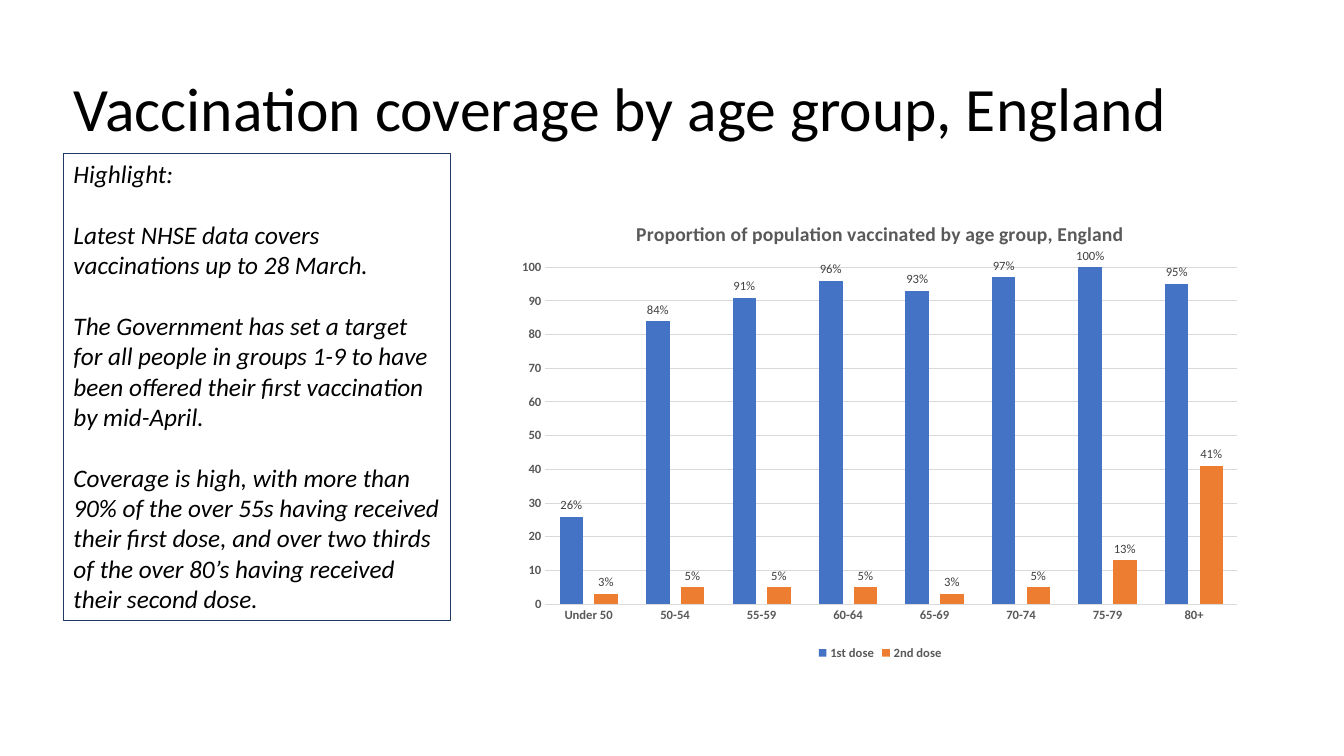
from dataclasses import dataclass
from typing import Any

from lxml.etree import SubElement
from pptx import Presentation
from pptx.chart.data import CategoryChartData
from pptx.dml.color import RGBColor
from pptx.enum.chart import XL_CHART_TYPE as ChartType
from pptx.enum.chart import XL_LABEL_POSITION as LabelPos
from pptx.enum.chart import XL_LEGEND_POSITION as LegendPos
from pptx.enum.chart import XL_TICK_MARK as Tick
from pptx.enum.shapes import MSO_SHAPE as Shape
from pptx.enum.text import MSO_ANCHOR as Anchor
from pptx.enum.text import MSO_AUTO_SIZE as AutoSize
from pptx.enum.text import PP_ALIGN as Align
from pptx.oxml.ns import qn
from pptx.util import Inches, Pt

WIDTH, HEIGHT = Inches(13.33), Inches(7.5)
FONT = "Calibri"
BLACK, GREY, LABEL_GREY, GRID_GREY, NAVY = "000000", "595959", "404040", "D9D9D9", "203864"


@dataclass(frozen=True)
class Area:
    left: float
    top: float
    width: float
    height: float

    def box(self) -> dict[str, int]:
        return {
            "left": int(WIDTH * self.left / 100),
            "top": int(HEIGHT * self.top / 100),
            "width": int(WIDTH * self.width / 100),
            "height": int(HEIGHT * self.height / 100),
        }


@dataclass(frozen=True)
class Dose:
    name: str
    values: tuple[int, ...]
    color: str


TITLE_AREA = Area(4.73, 5.07, 86.27, 19.33)
HIGHLIGHT_AREA = Area(4.73, 20.27, 28.81, 61.87)
CHART_AREA = Area(37.81, 26.8, 55.36, 61.07)
PLOT_LAYOUT = {"x": 0.05, "y": 0.14, "w": 0.93, "h": 0.73}

HIGHLIGHTS = (
    "Highlight:",
    "Latest NHSE data covers vaccinations up to 28 March.",
    "The Government has set a target for all people in groups 1-9 to have been "
    "offered their first vaccination by mid-April.",
    "Coverage is high, with more than 90% of the over 55s having received their "
    "first dose, and over two thirds of the over 80’s having received their second dose.",
)
AGE_GROUPS = ("Under 50", "50-54", "55-59", "60-64", "65-69", "70-74", "75-79", "80+")
DOSES = (
    Dose("1st dose", (26, 84, 91, 96, 93, 97, 100, 95), "4472C4"),
    Dose("2nd dose", (3, 5, 5, 5, 3, 5, 13, 41), "ED7D31"),
)


def rgb(color: str) -> RGBColor:
    return RGBColor.from_string(color)


def apply(target: Any, formats: dict[str, Any]) -> None:
    for name, value in formats.items():
        setattr(target, name, value)


def style_font(font: Any, size: float, color: str, bold: bool = False, italic: bool = False) -> None:
    apply(font, {"name": FONT, "size": Pt(size), "bold": bold, "italic": italic})
    font.color.rgb = rgb(color)


def style_line(line: Any, color: str) -> None:
    line.color.rgb = rgb(color)
    line.width = Pt(0.75)


def add_title(s: Any, text: str) -> None:
    sp = s.shapes.title
    apply(sp, TITLE_AREA.box())
    tf = sp.text_frame
    tf.text = text
    apply(tf, {"vertical_anchor": Anchor.MIDDLE, "auto_size": AutoSize.NONE, "word_wrap": True})
    p = tf.paragraphs[0]
    apply(p, {"alignment": Align.LEFT, "line_spacing": 0.9})
    style_font(p.runs[0].font, 44, BLACK)


def add_highlights(s: Any) -> None:
    sp = s.shapes.add_shape(Shape.RECTANGLE, **HIGHLIGHT_AREA.box())
    sp.shadow.inherit = False
    sp.fill.background()
    style_line(sp.line, NAVY)
    tf = sp.text_frame
    apply(tf, {"word_wrap": True, "vertical_anchor": Anchor.TOP, "auto_size": AutoSize.SHAPE_TO_FIT_TEXT})
    for i, text in enumerate(HIGHLIGHTS):
        p = tf.add_paragraph() if i else tf.paragraphs[0]
        apply(p, {"alignment": Align.LEFT, "space_before": Pt(22 if i else 0)})
        r = p.add_run()
        r.text = text
        style_font(r.font, 18, BLACK, italic=True)


def style_axes(chart: Any) -> None:
    for axis in (chart.category_axis, chart.value_axis):
        apply(axis, {"major_tick_mark": Tick.NONE, "minor_tick_mark": Tick.NONE})
        style_font(axis.tick_labels.font, 9, GREY, bold=True)
    style_line(chart.category_axis.format.line, GRID_GREY)
    axis = chart.value_axis
    apply(axis, {"minimum_scale": 0, "maximum_scale": 100, "major_unit": 10, "has_major_gridlines": True})
    apply(axis.tick_labels, {"number_format": "0", "number_format_is_linked": False})
    axis.format.line.fill.background()
    style_line(axis.major_gridlines.format.line, GRID_GREY)


def style_series(series: Any, dose: Dose) -> None:
    series.format.fill.solid()
    series.format.fill.fore_color.rgb = rgb(dose.color)
    labels = series.data_labels
    apply(labels, {
        "show_value": True,
        "number_format": '0"%"',
        "number_format_is_linked": False,
        "position": LabelPos.OUTSIDE_END,
    })
    style_font(labels.font, 9, LABEL_GREY)


def place_plot(chart: Any) -> None:
    area = chart.element.find(".//" + qn("c:plotArea"))
    for old in area.findall(qn("c:layout")):
        area.remove(old)
    layout = SubElement(area, qn("c:layout"))
    area.insert(0, layout)
    manual = SubElement(layout, qn("c:manualLayout"))
    modes = {"layoutTarget": "inner", "xMode": "edge", "yMode": "edge"}
    for tag, value in (modes | PLOT_LAYOUT).items():
        SubElement(manual, qn(f"c:{tag}")).set("val", str(value))


def add_coverage_chart(s: Any) -> None:
    data = CategoryChartData(number_format="0")
    data.categories = AGE_GROUPS
    for dose in DOSES:
        data.add_series(dose.name, dose.values)
    box = CHART_AREA.box()
    chart = s.shapes.add_chart(
        ChartType.COLUMN_CLUSTERED, box["left"], box["top"], box["width"], box["height"], data
    ).chart
    style_font(chart.font, 10, BLACK)
    apply(chart, {"has_title": True, "has_legend": True})
    title = chart.chart_title
    title.include_in_layout = False
    title.text_frame.text = "Proportion of population vaccinated by age group, England"
    style_font(title.text_frame.paragraphs[0].runs[0].font, 14, GREY, bold=True)
    apply(chart.legend, {"position": LegendPos.BOTTOM, "include_in_layout": False})
    style_font(chart.legend.font, 9, GREY, bold=True)
    style_axes(chart)
    plot = chart.plots[0]
    apply(plot, {"gap_width": 121, "overlap": -47, "vary_by_categories": False})
    for series, dose in zip(plot.series, DOSES):
        style_series(series, dose)
    place_plot(chart)


def main() -> None:
    prs = Presentation()
    apply(prs, {"slide_width": WIDTH, "slide_height": HEIGHT})
    s = prs.slides.add_slide(prs.slide_layouts.get_by_name("Title Only"))
    add_title(s, "Vaccination coverage by age group, England")
    add_highlights(s)
    add_coverage_chart(s)
    prs.save("out.pptx")


if __name__ == "__main__":
    main()
